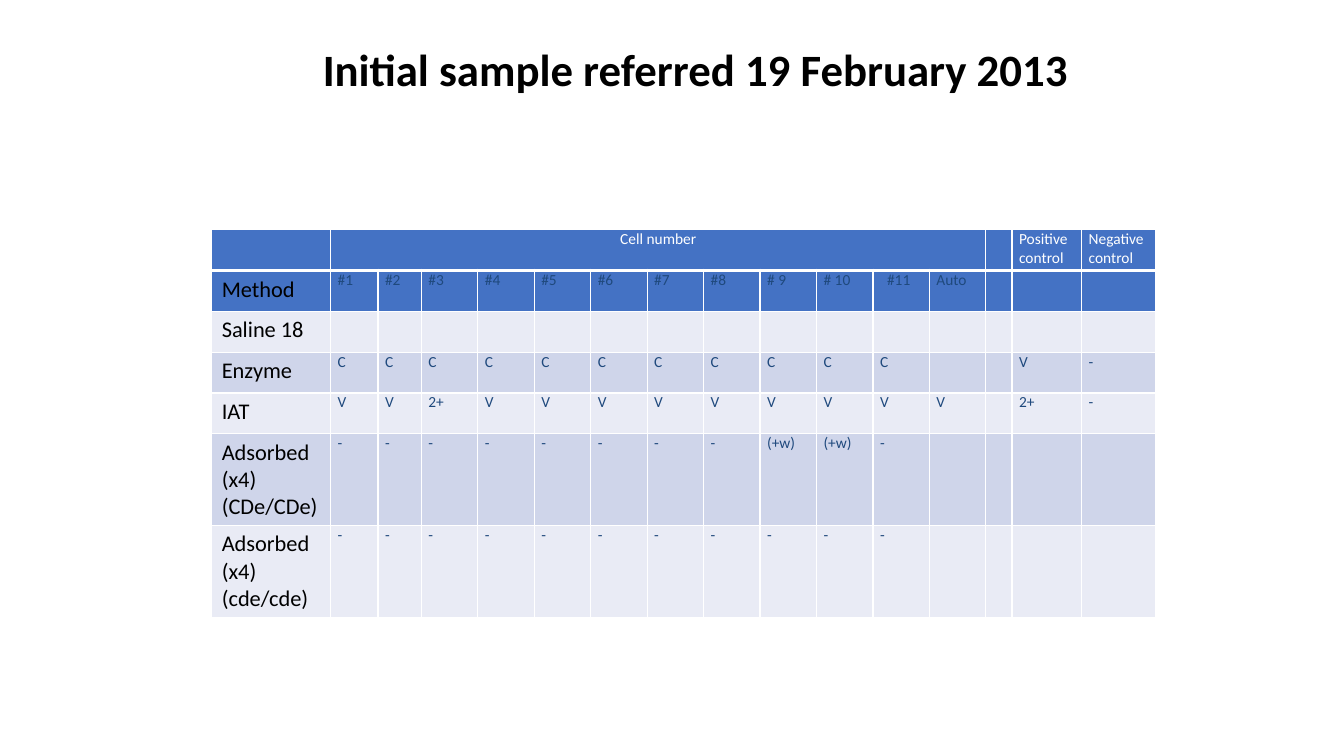
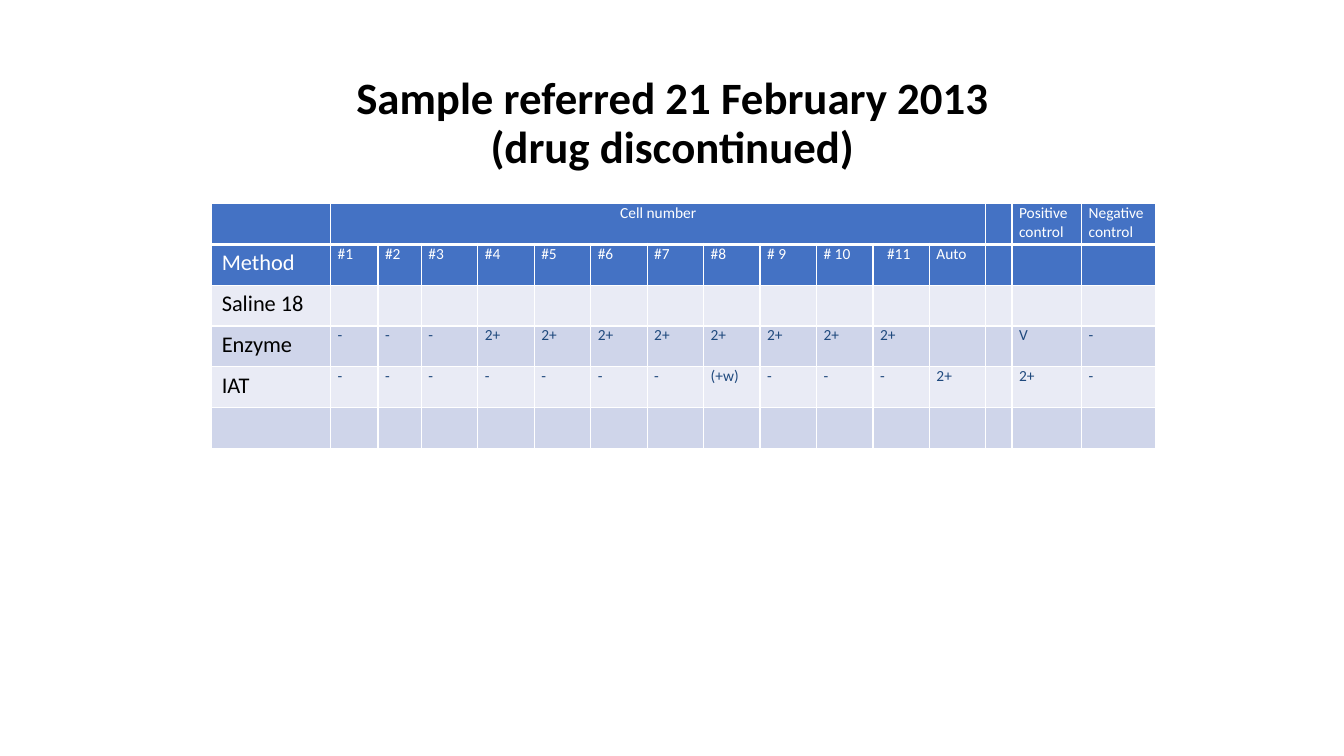
from dataclasses import dataclass

from lxml import etree
from pptx import Presentation
from pptx.dml.color import RGBColor as RGB
from pptx.enum.text import MSO_ANCHOR as ANCHOR, PP_ALIGN as ALIGN
from pptx.oxml.ns import qn
from pptx.util import Inches, Pt


@dataclass(frozen=True)
class Theme:
    font: str = "Calibri"
    black: RGB = RGB.from_string("000000")
    white: RGB = RGB.from_string("FFFFFF")
    navy: RGB = RGB.from_string("1F497D")
    header: RGB = RGB.from_string("4472C4")
    bands: tuple = (RGB.from_string("E9EBF5"), RGB.from_string("CFD5EA"))
    title_size: Pt = Pt(32)
    label_size: Pt = Pt(16)
    value_size: Pt = Pt(11)


T = Theme()
COLUMNS = [1.18, 0.47, 0.43] + [0.56] * 10 + [0.26, 0.69, 0.73]
ROW_H = Inches(2.43) // 6
TALL_ROW_H = Inches(0.91)

GROUPS = ["", "Cell number"] + [""] * 12 + ["Positive\ncontrol", "Negative control"]
METHOD = (["Method"] + [f"#{n}" for n in range(1, 9)]
          + ["# 9", "# 10", "#11", "Auto", "", "", ""])
SALINE = ["Saline 18"] + [""] * 15

SLIDES = [
    dict(
        title="Initial sample referred 19 February 2013",
        title_box=(2.65, 0.36, 8.5, 1.18), anchor=ANCHOR.TOP, spacing=1.0,
        table_top=2.28, method_colors=(T.black, T.navy),
        results=[
            SALINE,
            ["Enzyme"] + ["C"] * 11 + ["", "", "V", "-"],
            ["IAT", "V", "V", "2+"] + ["V"] * 9 + ["", "2+", "-"],
            ["Adsorbed (x4) (CDe/CDe)"] + ["-"] * 8 + ["(+w)", "(+w)", "-"] + [""] * 4,
            ["Adsorbed (x4) (cde/cde)"] + ["-"] * 11 + [""] * 4,
        ],
    ),
    dict(
        title="Sample referred 21 February 2013\n(drug discontinued)",
        title_box=(2.17, 0.61, 9, 1.25), anchor=ANCHOR.MIDDLE, spacing=0.9,
        table_top=2.02, method_colors=(T.white, T.white),
        results=[
            SALINE,
            ["Enzyme"] + ["-"] * 3 + ["2+"] * 8 + ["", "", "V", "-"],
            ["IAT"] + ["-"] * 7 + ["(+w)"] + ["-"] * 3 + ["2+", "", "2+", "-"],
            [""] * 16,
        ],
    ),
]


def write(p, text, size, color, bold=False):
    p.text = text
    p.font.name, p.font.size, p.font.bold = T.font, size, bold
    p.font.color.rgb = color


def style_cell(cell, fill, bottom_width):
    """Fill a cell and give it white borders, 1 pt except at the bottom."""
    tcPr = cell._tc.get_or_add_tcPr()
    for side in ("lnL", "lnR", "lnT", "lnB"):
        width = bottom_width if side == "lnB" else Pt(1)
        ln = etree.SubElement(tcPr, qn(f"a:{side}"), w=str(width))
        solid = etree.SubElement(ln, qn("a:solidFill"))
        etree.SubElement(solid, qn("a:srgbClr"), val=str(T.white))
    cell.fill.solid()
    cell.fill.fore_color.rgb = fill


prs = Presentation()
prs.slide_width, prs.slide_height = Inches(13.33), Inches(7.5)

for page in SLIDES:
    s = prs.slides.add_slide(prs.slide_layouts[6])

    tf = s.shapes.add_textbox(*map(Inches, page["title_box"])).text_frame
    tf.word_wrap = True
    tf.vertical_anchor = page["anchor"]
    p = tf.paragraphs[0]
    p.alignment = ALIGN.CENTER
    p.line_spacing = page["spacing"]
    write(p, page["title"], T.title_size, T.black, bold=True)

    rows = [GROUPS, METHOD] + page["results"]
    table = s.shapes.add_table(
        len(rows), len(COLUMNS), Inches(2.1), Inches(page["table_top"]),
        Inches(sum(COLUMNS)), ROW_H * len(rows)).table
    for column, width in zip(table.columns, COLUMNS):
        column.width = Inches(width)

    for i, row in enumerate(rows):
        if row[0].startswith("Adsorbed"):
            table.rows[i].height = TALL_ROW_H
        fill = T.header if i < 2 else T.bands[i % 2]
        label_color, value_color = (
            (T.white, T.white), page["method_colors"])[i] if i < 2 else (T.black, T.navy)
        for j, text in enumerate(row):
            cell = table.cell(i, j)
            style_cell(cell, fill, Pt(3) if i == 0 else Pt(1))
            if not text:
                continue
            p = cell.text_frame.paragraphs[0]
            if j == 0:
                write(p, text, T.label_size, label_color)
                continue
            cell.margin_left = Inches(0.14 if text == "#11" else 0.07)
            cell.margin_right = Inches(0.07)
            cell.margin_top = cell.margin_bottom = 0
            write(p, text, T.value_size, value_color)

    group = table.cell(0, 1)
    group.merge(table.cell(0, 12))
    group.text_frame.paragraphs[0].alignment = ALIGN.CENTER

prs.save("out.pptx")
